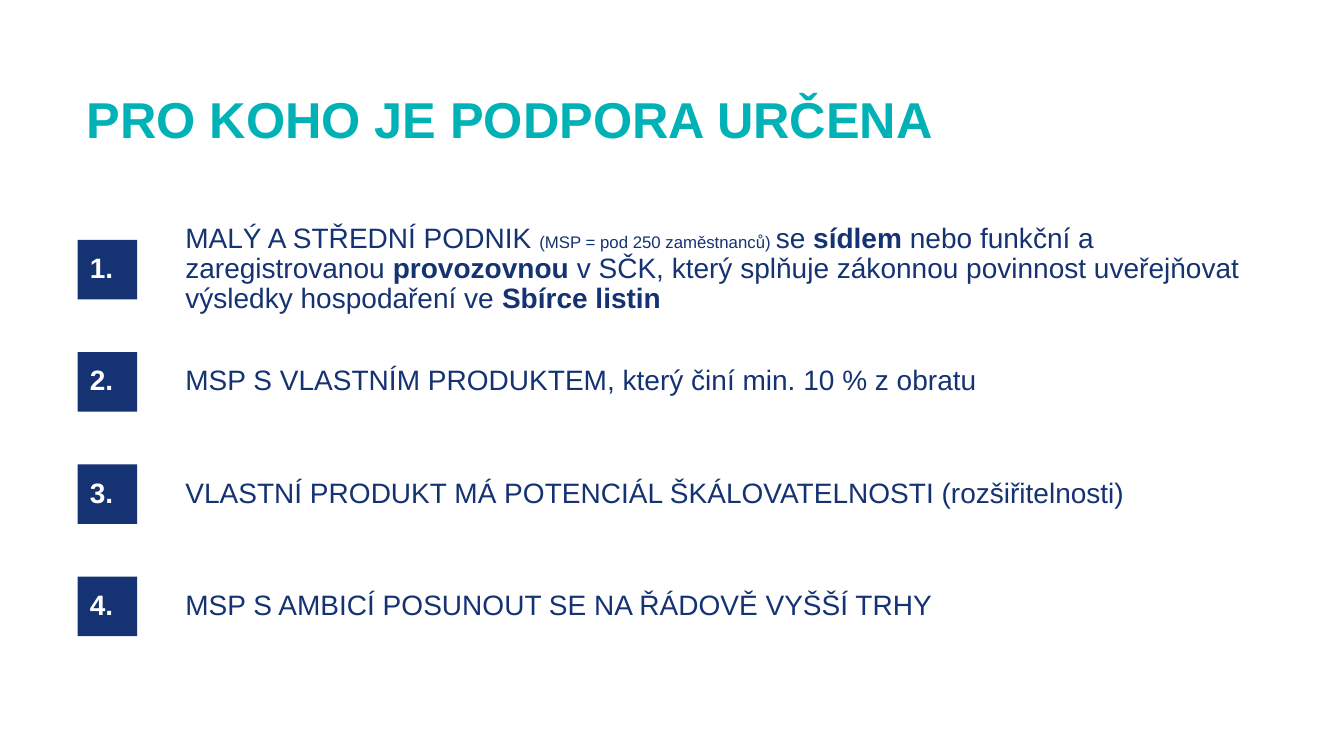
"""Builds a slide listing four numbered conditions for receiving support."""
from dataclasses import dataclass

from pptx import Presentation
from pptx.dml.color import RGBColor
from pptx.enum.shapes import MSO_SHAPE
from pptx.enum.text import MSO_ANCHOR, PP_ALIGN
from pptx.util import Inches, Pt

RECTANGLE = MSO_SHAPE.RECTANGLE
MIDDLE = MSO_ANCHOR.MIDDLE
LEFT = PP_ALIGN.LEFT

FONT = "Arial"
COLORS = {"teal": "00B1B6", "navy": "153272", "white": "FFFFFF"}
FIRST_TOP, LAST_TOP = 2.38, 5.72
BADGE_LEFT, BADGE_SIZE = 0.77, 0.59
TEXT_LEFT, TEXT_WIDTH, TEXT_HEIGHT = 1.74, 10.83, 0.79


@dataclass(frozen=True)
class Segment:
    text: str
    size: float = 20
    bold: bool = False


@dataclass(frozen=True)
class Condition:
    segments: tuple[Segment, ...]


CONDITIONS = (
    Condition((
        Segment("MALÝ A STŘEDNÍ PODNIK "),
        Segment("(MSP = pod 250 zaměstnanců) ", size=12),
        Segment("se "),
        Segment("sídlem", bold=True),
        Segment(" nebo funkční a zaregistrovanou "),
        Segment("provozovnou", bold=True),
        Segment(" v SČK, který splňuje zákonnou povinnost uveřejňovat "
                "výsledky hospodaření ve "),
        Segment("Sbírce listin", bold=True),
    )),
    Condition((Segment("MSP S VLASTNÍM PRODUKTEM, který činí min. 10 % z obratu"),)),
    Condition((Segment("VLASTNÍ PRODUKT MÁ POTENCIÁL ŠKÁLOVATELNOSTI (rozšiřitelnosti)"),)),
    Condition((Segment("MSP S AMBICÍ POSUNOUT SE NA ŘÁDOVĚ VYŠŠÍ TRHY"),)),
)


def write_text(shape, segments: tuple[Segment, ...], color: str) -> None:
    frame = shape.text_frame
    frame.word_wrap = True
    frame.vertical_anchor = MIDDLE
    paragraph = frame.paragraphs[0]
    paragraph.alignment = LEFT
    paragraph.line_spacing = 0.9
    paragraph.font.name = FONT
    paragraph.font.color.rgb = RGBColor.from_string(COLORS[color])
    if len(segments) == 1:
        paragraph.font.size = Pt(segments[0].size)
        paragraph.font.bold = segments[0].bold
    for segment in segments:
        run = paragraph.add_run()
        run.text = segment.text
        if len(segments) > 1:
            run.font.size = Pt(segment.size)
            run.font.bold = segment.bold


def add_text(slide, left: float, top: float, width: float,
             segments: tuple[Segment, ...], color: str) -> None:
    box = slide.shapes.add_textbox(
        Inches(left), Inches(top), Inches(width), Inches(TEXT_HEIGHT))
    write_text(box, segments, color)


def add_badge(slide, top: float, number: int) -> None:
    badge = slide.shapes.add_shape(
        RECTANGLE, Inches(BADGE_LEFT), Inches(top), Inches(BADGE_SIZE), Inches(BADGE_SIZE))
    badge.shadow.inherit = False
    badge.fill.solid()
    badge.fill.fore_color.rgb = RGBColor.from_string(COLORS["navy"])
    badge.line.fill.background()
    frame = badge.text_frame
    frame.margin_left = Inches(0.12)
    frame.margin_right = Inches(0.1)
    frame.margin_top = frame.margin_bottom = 0
    write_text(badge, (Segment(f"{number}.", bold=True),), "white")


def main() -> None:
    presentation = Presentation()
    presentation.slide_width = Inches(13.33)
    presentation.slide_height = Inches(7.5)
    slide = presentation.slides.add_slide(presentation.slide_layouts[6])
    title = Segment("PRO KOHO JE PODPORA URČENA", size=36, bold=True)
    add_text(slide, 0.76, 0.82, 11.81, (title,), "teal")
    pitch = (LAST_TOP - FIRST_TOP) / (len(CONDITIONS) - 1)
    for index, condition in enumerate(CONDITIONS):
        top = FIRST_TOP + index * pitch
        add_badge(slide, top, index + 1)
        text_top = top - (TEXT_HEIGHT - BADGE_SIZE) / 2
        add_text(slide, TEXT_LEFT, text_top, TEXT_WIDTH, condition.segments, "navy")
    presentation.save("out.pptx")


if __name__ == "__main__":
    main()
